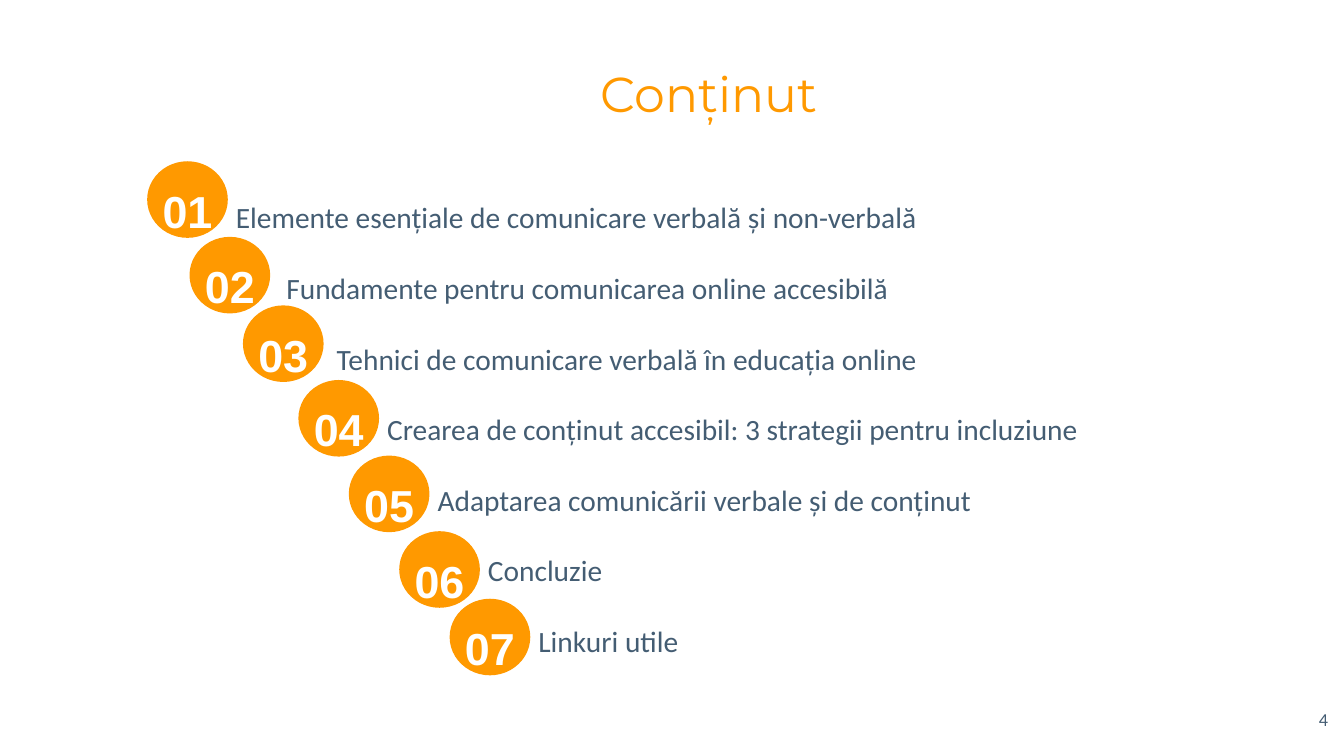
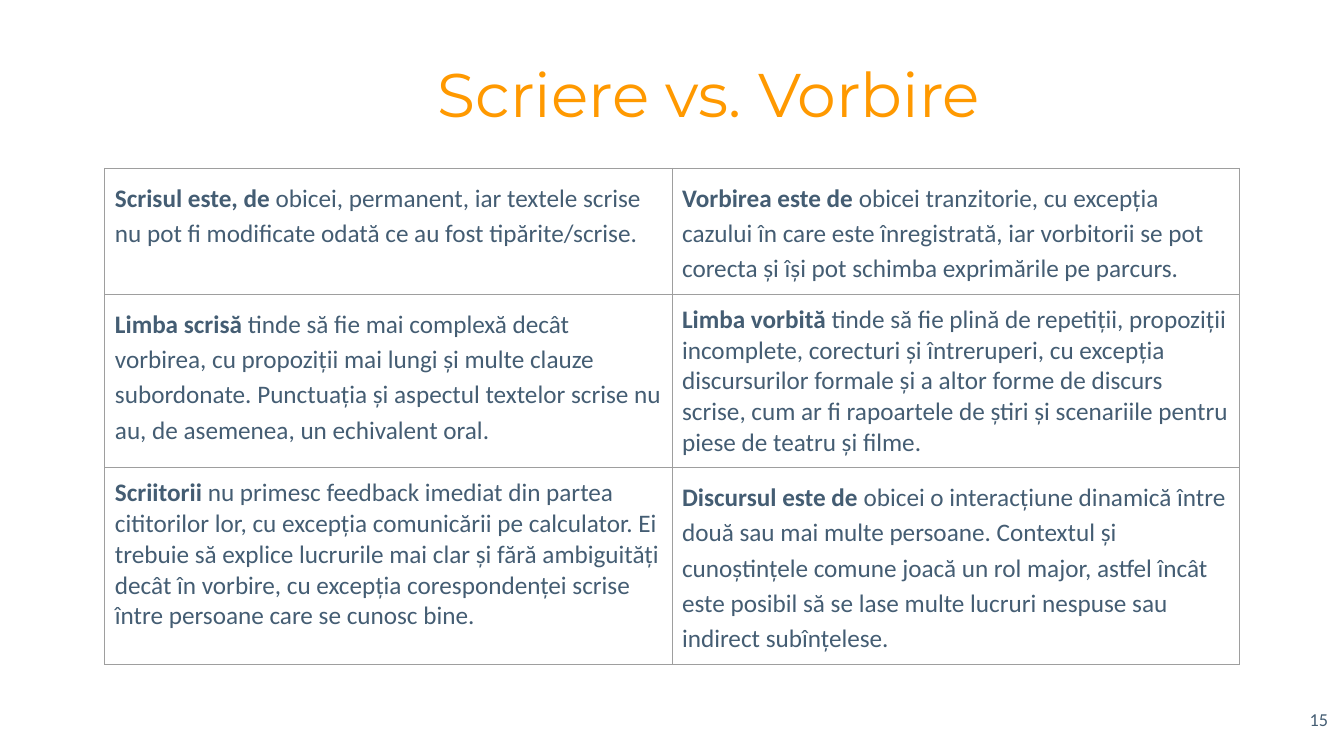
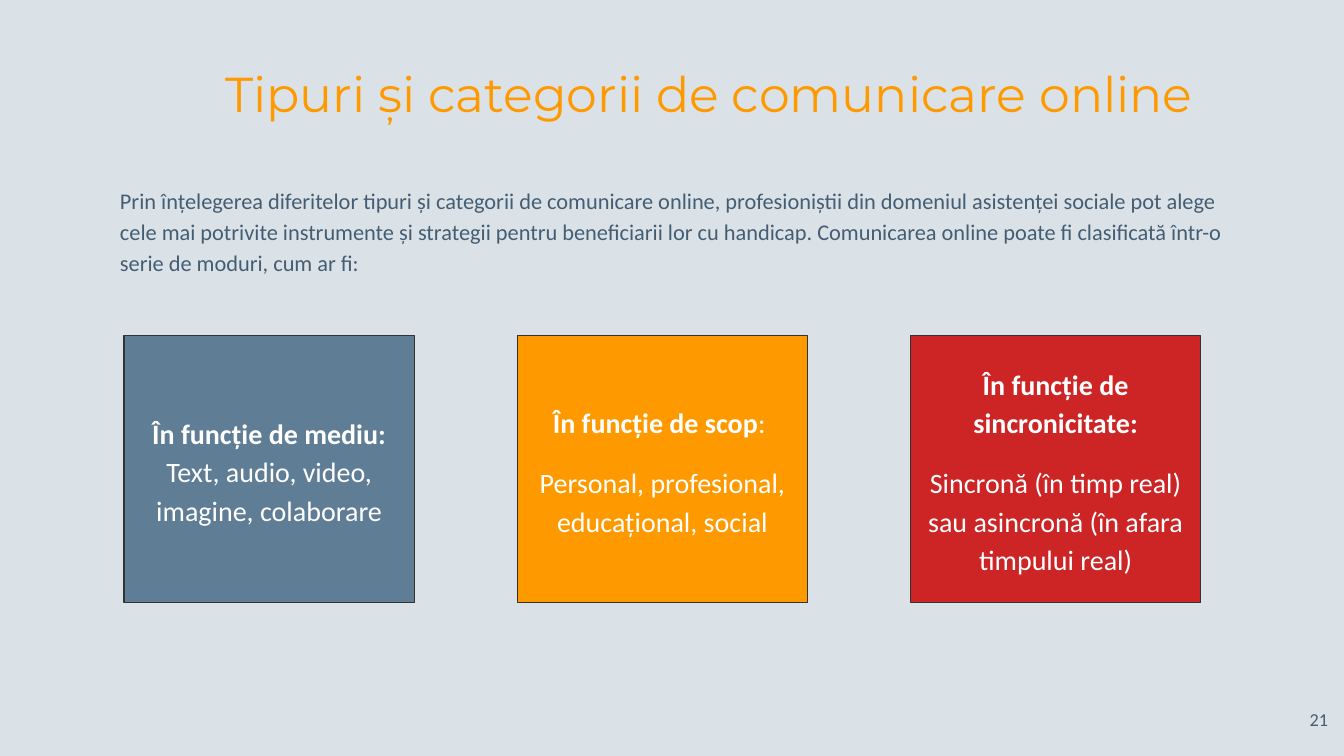
from dataclasses import dataclass
from typing import Optional

from lxml.etree import SubElement
from pptx import Presentation
from pptx.dml.color import RGBColor
from pptx.enum.shapes import MSO_SHAPE as Shape
from pptx.enum.text import MSO_ANCHOR as Anchor, PP_ALIGN as Align
from pptx.oxml.ns import qn
from pptx.util import Inches, Pt

# Shared look
WHITE = RGBColor(0xFF, 0xFF, 0xFF)
MIST = RGBColor(0xDB, 0xE2, 0xE7)
ORANGE = RGBColor(0xFF, 0x99, 0x00)
SLATE = RGBColor(0x44, 0x5D, 0x73)
BLUE = RGBColor(0x5F, 0x7D, 0x95)
RED = RGBColor(0xCD, 0x25, 0x25)
CHARCOAL = RGBColor(0x33, 0x33, 0x33)
GRID_GREY = RGBColor(0x9E, 0x9E, 0x9E)
TITLE_FONT, BODY_FONT, NUMBER_FONT = "Montserrat", "Calibri", "Arial"


@dataclass(frozen=True)
class Para:
    """A paragraph that opens with bold words and goes on in plain ones."""
    bold: str = ""
    plain: str = ""
    spacing: Optional[float] = None
    before: float = 0
    after: float = 0
    indent: float = 0


@dataclass(frozen=True)
class Style:
    size: float
    color: RGBColor = SLATE
    font: str = BODY_FONT
    align: Align = Align.LEFT


@dataclass(frozen=True)
class Topic:
    left: float
    top: float
    text: str


@dataclass(frozen=True)
class Category:
    fill: RGBColor
    paras: list[Para]


TOPICS = [
    Topic(1.46, 1.60, "Elemente esențiale de comunicare verbală și non-verbală"),
    Topic(1.88, 2.35, "Fundamente pentru comunicarea online accesibilă"),
    Topic(2.41, 3.03, "Tehnici de comunicare verbală în educația online"),
    Topic(2.96, 3.77, "Crearea de conținut accesibil: 3 strategii pentru incluziune"),
    Topic(3.46, 4.52, "Adaptarea comunicării verbale și de conținut"),
    Topic(3.96, 5.27, "Concluzie"),
    Topic(4.46, 5.94, "Linkuri utile"),
]

COMPARISON = [
    [Para("Scrisul este, de ", "obicei, permanent, iar textele scrise nu pot fi "
          "modificate odată ce au fost tipărite/scrise.", 1.15),
     Para("Vorbirea este de ", "obicei tranzitorie, cu excepția cazului în care este "
          "înregistrată, iar vorbitorii se pot corecta și își pot schimba exprimările "
          "pe parcurs.", 1.15)],
    [Para("Limba scrisă ", "tinde să fie mai complexă decât vorbirea, cu propoziții mai "
          "lungi și multe clauze subordonate. Punctuația și aspectul textelor scrise nu "
          "au, de asemenea, un echivalent oral.", 1.15),
     Para("Limba vorbită ", "tinde să fie plină de repetiții, propoziții incomplete, "
          "corecturi și întreruperi, cu excepția discursurilor formale și a altor forme "
          "de discurs scrise, cum ar fi rapoartele de știri și scenariile pentru piese "
          "de teatru și filme.")],
    [Para("Scriitorii ", "nu primesc feedback imediat din partea cititorilor lor, cu "
          "excepția comunicării pe calculator. Ei trebuie să explice lucrurile mai clar "
          "și fără ambiguități decât în vorbire, cu excepția corespondenței scrise între "
          "persoane care se cunosc bine."),
     Para("Discursul este de ", "obicei o interacțiune dinamică între două sau mai multe "
          "persoane. Contextul și cunoștințele comune joacă un rol major, astfel încât "
          "este posibil să se lase multe lucruri nespuse sau indirect subînțelese.", 1.15)],
]
ROW_HEIGHTS = [1.25, 1.72, 1.95]

ONLINE_INTRO = (
    "Prin înțelegerea diferitelor tipuri și categorii de comunicare online, profesioniștii "
    "din domeniul asistenței sociale pot alege cele mai potrivite instrumente și strategii "
    "pentru beneficiarii lor cu handicap. Comunicarea online poate fi clasificată într-o "
    "serie de moduri, cum ar fi:")
CATEGORIES = [
    Category(BLUE, [Para("În funcție de mediu: ", "Text, audio, video, imagine, colaborare",
                         1.15, after=15)]),
    Category(ORANGE, [Para("În funcție de scop", ": ", 1.15),
                      Para("", "Personal, profesional, educațional, social", 1.15, 15, 15)]),
    Category(RED, [Para("În funcție de sincronicitate:", "", 1.15),
                   Para("", "Sincronă (în timp real) sau asincronă (în afara timpului real)",
                        1.15, 15, 15)]),
]


# Helpers
def write(frame, paras: list[Para], style: Style) -> None:
    for i, para in enumerate(paras):
        paragraph = frame.paragraphs[0] if i == 0 else frame.add_paragraph()
        paragraph.alignment = style.align
        paragraph.space_before, paragraph.space_after = Pt(para.before), Pt(para.after)
        if para.spacing:
            paragraph.line_spacing = para.spacing
        if para.indent:
            paragraph._p.get_or_add_pPr().set("marL", str(Inches(para.indent)))
        for text, bold in ((para.bold, True), (para.plain, False)):
            if text:
                run = paragraph.add_run()
                run.text = text
                run.font.name, run.font.size = style.font, Pt(style.size)
                run.font.bold, run.font.color.rgb = bold, style.color


def set_frame(frame, inset: float, anchor: Anchor) -> None:
    frame.word_wrap = True
    frame.vertical_anchor = anchor
    frame.margin_left = frame.margin_right = Inches(inset)
    frame.margin_top = frame.margin_bottom = Inches(inset)


def add_text(slide, left: float, top: float, width: float, height: float,
             paras: list[Para], style: Style, inset: float = 0.14,
             anchor: Anchor = Anchor.TOP) -> None:
    box = slide.shapes.add_textbox(Inches(left), Inches(top), Inches(width), Inches(height))
    set_frame(box.text_frame, inset, anchor)
    write(box.text_frame, paras, style)


def add_filled(slide, kind: Shape, left: float, top: float, width: float, height: float,
               fill: RGBColor):
    shape = slide.shapes.add_shape(kind, Inches(left), Inches(top),
                                   Inches(width), Inches(height))
    shape.shadow.inherit = False
    shape.fill.solid()
    shape.fill.fore_color.rgb = fill
    shape.line.fill.background()
    return shape


def border_cell(cell) -> None:
    properties = cell._tc.get_or_add_tcPr()
    for i, side in enumerate(("a:lnL", "a:lnR", "a:lnT", "a:lnB")):
        line = SubElement(properties, qn(side), w=str(Pt(0.75)))
        SubElement(SubElement(line, qn("a:solidFill")), qn("a:srgbClr"), val=str(GRID_GREY))
        properties.insert(i, line)


def start_slide(deck, title: str, number: int, title_size: float = 35,
                background: RGBColor = WHITE):
    slide = deck.slides.add_slide(deck.slide_layouts[6])
    slide.background.fill.solid()
    slide.background.fill.fore_color.rgb = background
    add_text(slide, 1.7, 0.51, 10.67, 0.83, [Para(plain=title)],
             Style(title_size, ORANGE, TITLE_FONT, Align.CENTER), anchor=Anchor.MIDDLE)
    add_text(slide, 12.47, 6.93, 0.8, 0.57, [Para(plain=str(number))],
             Style(13, align=Align.RIGHT), inset=0.1)
    return slide


# Slides
def build_contents(deck) -> None:
    slide = start_slide(deck, "Conținut", 4)
    add_text(slide, 2.2, 1.49, 9.84, 0.76,
             [Para(plain=topic.text, spacing=2, indent=0.5 * i)
              for i, topic in enumerate(TOPICS)], Style(21))
    number_style = Style(32, WHITE, NUMBER_FONT, Align.CENTER)
    for number, topic in enumerate(TOPICS, start=1):
        badge = add_filled(slide, Shape.OVAL, topic.left, topic.top, 0.8, 0.76, ORANGE)
        set_frame(badge.text_frame, 0.02, Anchor.MIDDLE)
        write(badge.text_frame, [Para(bold=f"{number:02}", spacing=1.4)], number_style)


def build_comparison(deck) -> None:
    slide = start_slide(deck, "Scriere vs. Vorbire", 15, title_size=44)
    table = slide.shapes.add_table(len(COMPARISON), 2, Inches(1.04), Inches(1.67),
                                   Inches(11.25), Inches(sum(ROW_HEIGHTS))).table
    table.first_row = table.horz_banding = False
    for r, (height, row) in enumerate(zip(ROW_HEIGHTS, COMPARISON)):
        table.rows[r].height = Inches(height)
        for c, para in enumerate(row):
            cell = table.cell(r, c)
            cell.margin_left = cell.margin_right = Inches(0.1)
            cell.margin_top = cell.margin_bottom = Inches(0.1)
            cell.fill.background()
            border_cell(cell)
            write(cell.text_frame, [para], Style(18))


def build_categories(deck) -> None:
    slide = start_slide(deck, "Tipuri și categorii de comunicare online", 21,
                        background=MIST)
    add_text(slide, 1.05, 1.68, 11.23, 0.76, [Para(plain=ONLINE_INTRO, spacing=1.15)],
             Style(16))
    for i, category in enumerate(CATEGORIES):
        card = add_filled(slide, Shape.RECTANGLE, 1.23 + 3.9 * i, 3.33, 2.88, 2.65,
                          category.fill)
        card.line.color.rgb = CHARCOAL
        card.line.width = Pt(0.75)
        set_frame(card.text_frame, 0.1, Anchor.MIDDLE)
        write(card.text_frame, category.paras, Style(20, WHITE, align=Align.CENTER))


def main() -> None:
    deck = Presentation()
    deck.slide_width, deck.slide_height = Inches(13.33), Inches(7.5)
    build_contents(deck)
    build_comparison(deck)
    build_categories(deck)
    deck.save("out.pptx")


if __name__ == "__main__":
    main()
